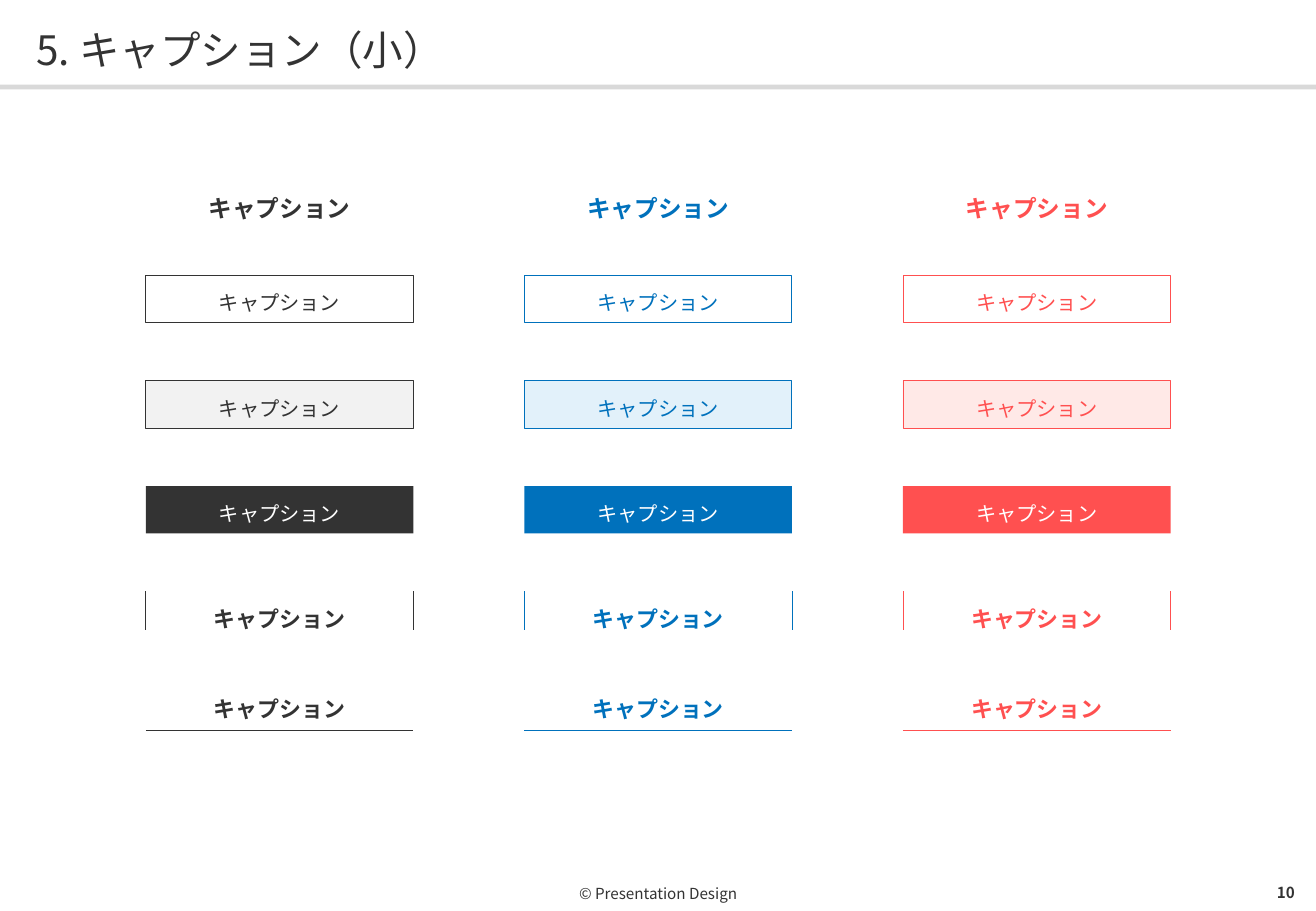
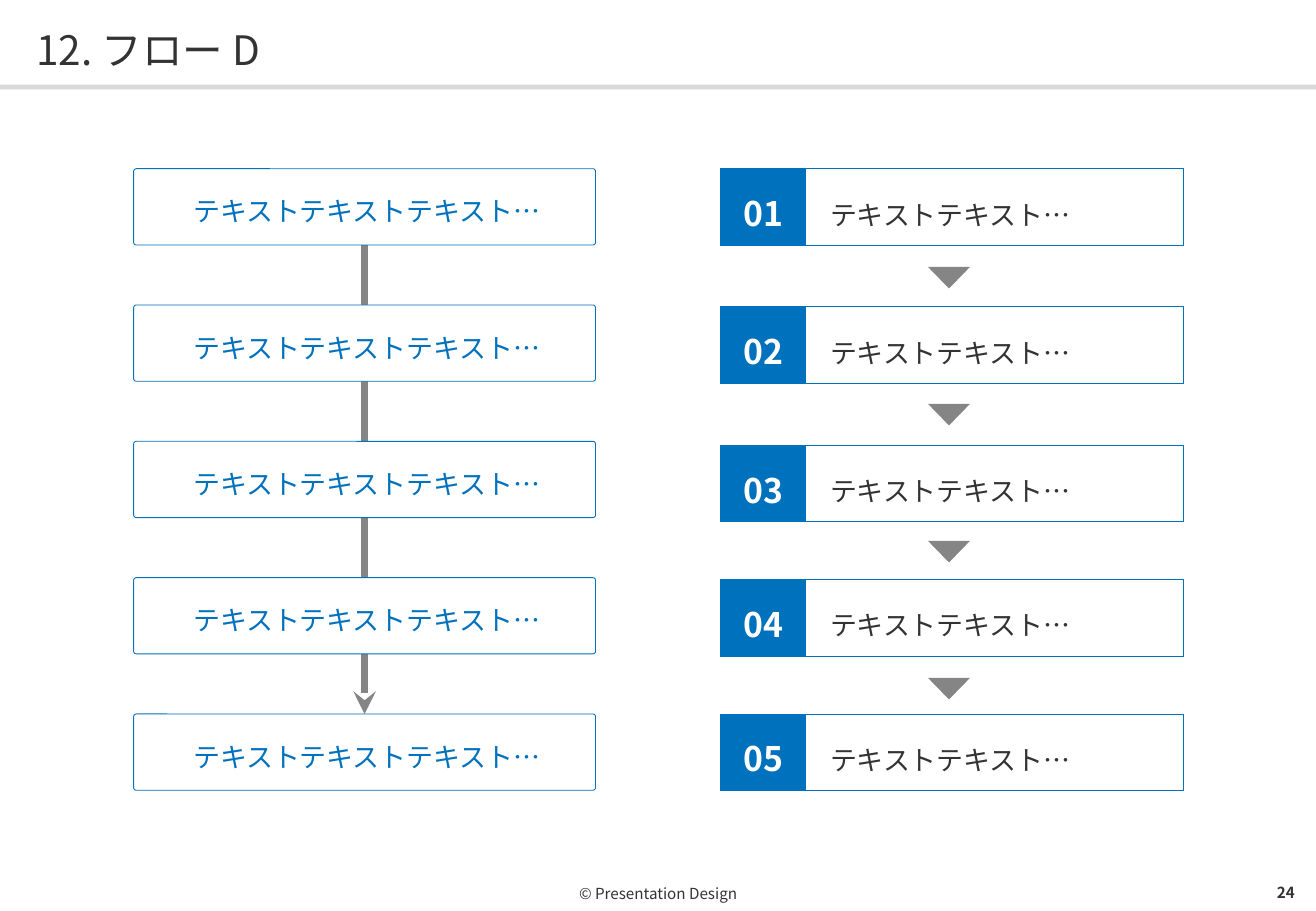
from dataclasses import dataclass
from typing import Optional

from lxml.etree import SubElement
from pptx import Presentation
from pptx.dml.color import RGBColor
from pptx.enum.shapes import MSO_CONNECTOR, MSO_SHAPE
from pptx.enum.text import MSO_ANCHOR, MSO_AUTO_SIZE, PP_ALIGN
from pptx.oxml import parse_xml
from pptx.oxml.ns import nsdecls, qn
from pptx.util import Pt

FONT = "Noto Sans CJK JP"
COLORS = {
    "ink": "333333", "ink_tint": "F2F2F2",
    "blue": "0071BC", "blue_tint": "E2F1FA",
    "red": "FF5050", "red_tint": "FFE9E7",
    "white": "FFFFFF", "band": "D9D9D9", "arrow": "858585",
}
PAGE_WIDTH, PAGE_HEIGHT = 780, 540
HAIRLINE = 0.5


@dataclass(frozen=True)
class Box:
    left: float
    top: float
    width: float
    height: float

    def lengths(self) -> tuple:
        return Pt(self.left), Pt(self.top), Pt(self.width), Pt(self.height)


@dataclass(frozen=True)
class TextStyle:
    size: float
    color: str = "ink"
    bold: bool = False
    align: PP_ALIGN = PP_ALIGN.CENTER
    spacing: Optional[float] = None
    insets: tuple = (0, 0, 0, 0)  # left, top, right, bottom


@dataclass(frozen=True)
class CaptionRow:
    top: float
    height: float
    size: float
    bold: bool
    insets: tuple
    fill: Optional[str] = None  # "tint", "solid" or none
    outlined: bool = False
    sides: str = ""  # cell borders; a row with any is a table


CAPTION_INSETS = (11.5, 5.75, 11.5, 4.3)
CAPTION_ROWS = (
    CaptionRow(111.6, 20.2, 14, True, (0, 0, 0, 0)),
    CaptionRow(163.4, 28, 12, False, CAPTION_INSETS, outlined=True),
    CaptionRow(225.8, 28, 12, False, CAPTION_INSETS, "tint", True),
    CaptionRow(288.2, 28, 12, False, CAPTION_INSETS, "solid"),
    CaptionRow(350.4, 22.3, 13, True, (8.6, 2.9, 8.6, 1.4), sides="LR"),
    CaptionRow(406.8, 25.5, 13, True, (0, 0, 0, 7.2), sides="B"),
)


def rgb(name: str) -> RGBColor:
    return RGBColor.from_string(COLORS[name])


def set_fill(fill, color: Optional[str]) -> None:
    if color is None:
        fill.background()
    else:
        fill.solid()
        fill.fore_color.rgb = rgb(color)


def write(frame, text: str, style: TextStyle) -> None:
    frame.text = text
    para = frame.paragraphs[0]
    para.alignment = style.align
    if style.spacing:
        para.line_spacing = style.spacing
    font = para.font
    font.name, font.size, font.bold = FONT, Pt(style.size), style.bold
    font.color.rgb = rgb(style.color)
    latin = para._p.find(".//" + qn("a:latin"))
    latin.addnext(parse_xml(f'<a:ea {nsdecls("a")} typeface="{FONT}"/>'))


def set_insets(holder, insets: tuple) -> None:
    (holder.margin_left, holder.margin_top,
     holder.margin_right, holder.margin_bottom) = map(Pt, insets)


def write_frame(frame, text: str, style: TextStyle, auto_size=MSO_AUTO_SIZE.NONE) -> None:
    frame.word_wrap = True
    frame.auto_size = auto_size
    frame.vertical_anchor = MSO_ANCHOR.MIDDLE
    set_insets(frame, style.insets)
    write(frame, text, style)


def add_label(page, box: Box, text: str, style: TextStyle) -> None:
    write_frame(page.shapes.add_textbox(*box.lengths()).text_frame, text, style)


def add_block(page, kind: MSO_SHAPE, box: Box, fill: Optional[str], line: Optional[str] = None):
    shape = page.shapes.add_shape(kind, *box.lengths())
    shape.shadow.inherit = False
    set_fill(shape.fill, fill)
    set_fill(shape.line.fill, line)
    if line:
        shape.line.width = Pt(HAIRLINE)
    return shape


def add_plain_table(page, box: Box, widths: tuple):
    """Add a one-row table without the banded style and return its cells."""
    table = page.shapes.add_table(1, len(widths), *box.lengths()).table
    table.first_row = table.horz_banding = False
    for column, width in zip(table.columns, widths):
        column.width = Pt(width)
    return table.rows[0].cells


def fill_cell(cell, text: str, style: TextStyle, fill: Optional[str],
              border: str, sides: str, anchor: MSO_ANCHOR) -> None:
    set_insets(cell, style.insets)
    cell.vertical_anchor = anchor
    write(cell.text_frame, text, style)
    set_fill(cell.fill, fill)
    properties = cell._tc.get_or_add_tcPr()
    for index, side in enumerate("LRTB"):
        paint = (f'<a:solidFill><a:srgbClr val="{COLORS[border]}"/></a:solidFill>'
                 if side in sides else "<a:noFill/>")
        properties.insert(index, parse_xml(
            f'<a:ln{side} {nsdecls("a")} w="{Pt(HAIRLINE)}">{paint}</a:ln{side}>'))


def add_page(deck, title: str, number: int):
    """Add a page with the shared band, footer, page number and title."""
    page = deck.slides.add_slide(deck.slide_layouts[5])
    add_block(page, MSO_SHAPE.RECTANGLE, Box(0, 50.2, PAGE_WIDTH, 2.9), "band")
    add_label(page, Box(64, 519, 652, 21), "© Presentation Design", TextStyle(9))
    add_label(page, Box(730, 519, 37.5, 20), str(number),
              TextStyle(9, bold=True, align=PP_ALIGN.RIGHT))
    heading = page.shapes.title
    heading.left, heading.top, heading.width, heading.height = Box(21.6, 12.4, 737, 31).lengths()
    write_frame(heading.text_frame, title,
                TextStyle(24, align=PP_ALIGN.LEFT, spacing=1.1))
    return page


def add_caption(page, left: float, accent: str, row: CaptionRow) -> None:
    box = Box(left, row.top, 158.6, row.height)
    color = "white" if row.fill == "solid" else accent
    style = TextStyle(row.size, color, row.bold, spacing=1.2, insets=row.insets)
    if row.sides:
        cell = add_plain_table(page, box, (box.width,))[0]
        fill_cell(cell, "キャプション", style, None, accent, row.sides, MSO_ANCHOR.TOP)
        return
    fill = {"tint": f"{accent}_tint", "solid": accent}.get(row.fill)
    shape = add_block(page, MSO_SHAPE.RECTANGLE, box, fill, accent if row.outlined else None)
    write_frame(shape.text_frame, "キャプション", style, MSO_AUTO_SIZE.SHAPE_TO_FIT_TEXT)


def build_captions(deck) -> None:
    page = add_page(deck, "5. キャプション（小）", 10)
    for index, accent in enumerate(("ink", "blue", "red")):
        for row in CAPTION_ROWS:
            add_caption(page, 86.4 + 224.4 * index, accent, row)


def add_arrow(page):
    arrow = page.shapes.add_connector(MSO_CONNECTOR.STRAIGHT, 0, 0, 0, 0)
    arrow.line.color.rgb = rgb("arrow")
    arrow.line.width = Pt(4.5)
    SubElement(arrow.line._get_or_add_ln(), qn("a:tailEnd"), type="stealth")
    SubElement(arrow._element.spPr, qn("a:effectLst"))
    return arrow


def add_box_flow(page) -> None:
    arrow = add_arrow(page)  # first, so that it runs behind the boxes
    style = TextStyle(16, "blue", spacing=1.1, insets=(11.5, 13, 8.6, 10))
    steps = []
    for index in range(5):
        step = add_block(page, MSO_SHAPE.ROUNDED_RECTANGLE,
                         Box(79.2, 100 + 80.8 * index, 273.8, 45.2), "white", "blue")
        step.adjustments[0] = 0.035
        write_frame(step.text_frame, "テキストテキストテキスト…", style,
                    MSO_AUTO_SIZE.SHAPE_TO_FIT_TEXT)
        steps.append(step)
    arrow.begin_connect(steps[0], 2)
    arrow.end_connect(steps[-1], 0)


def add_numbered_flow(page) -> None:
    number_style = TextStyle(20, "white", True, spacing=1.1, insets=(0, 5.75, 0, 2.9))
    text_style = TextStyle(16, align=PP_ALIGN.JUSTIFY, spacing=1.2,
                           insets=(14.4, 5.75, 0, 2.9))
    widths = (50.6, 224)
    for number, top in enumerate((100, 181.9, 263.9, 343.5, 423.2), start=1):
        cells = add_plain_table(page, Box(427, top, sum(widths), 45.4), widths)
        contents = ((f"{number:02}", number_style, "blue"),
                    ("テキストテキスト…", text_style, "white"))
        for cell, (text, style, fill) in zip(cells, contents):
            fill_cell(cell, text, style, fill, "blue", "LRTB", MSO_ANCHOR.MIDDLE)
    for index in range(4):
        add_block(page, MSO_SHAPE.FLOWCHART_MERGE,
                  Box(550, 158.2 + 81.2 * index, 25, 12.8), "arrow")


def build_flow(deck) -> None:
    page = add_page(deck, "12. フロー D", 24)
    add_box_flow(page)
    add_numbered_flow(page)


def main() -> None:
    deck = Presentation()
    deck.slide_width, deck.slide_height = Pt(PAGE_WIDTH), Pt(PAGE_HEIGHT)
    build_captions(deck)
    build_flow(deck)
    deck.save("out.pptx")


if __name__ == "__main__":
    main()
